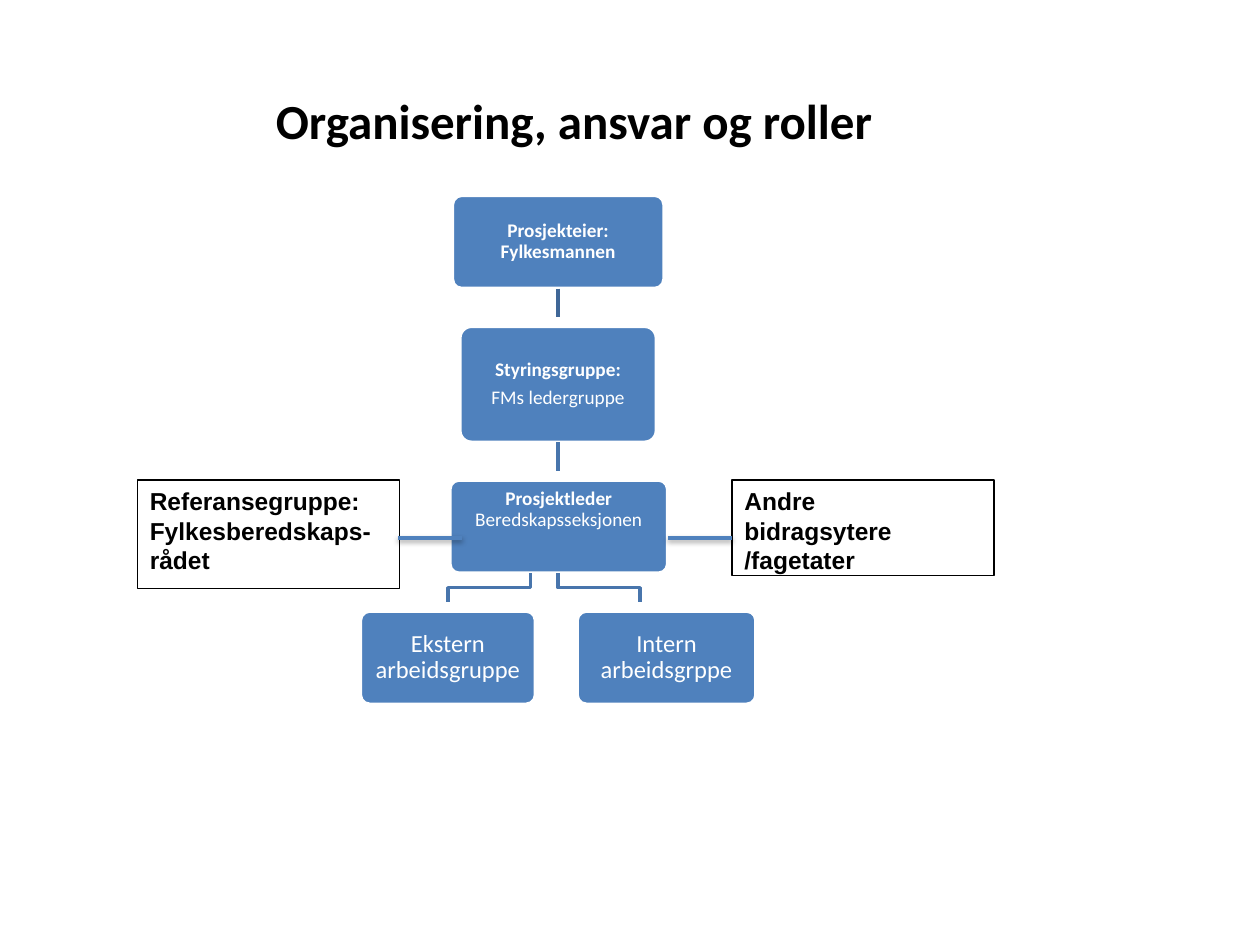
from lxml.etree import SubElement
from pptx import Presentation
from pptx.dml.color import RGBColor
from pptx.enum.shapes import MSO_CONNECTOR, MSO_SHAPE
from pptx.enum.text import MSO_ANCHOR, MSO_AUTO_SIZE, PP_ALIGN
from pptx.oxml.ns import qn
from pptx.util import Inches, Pt

BLACK = RGBColor(0x00, 0x00, 0x00)
WHITE = RGBColor(0xFF, 0xFF, 0xFF)
BLUE = RGBColor(0x4F, 0x81, 0xBD)
DARK = RGBColor(0x3F, 0x67, 0x97)
MID = RGBColor(0x48, 0x75, 0xAC)

AXIS = 4.43   # centre of the main chain
LINK = 0.23   # visible length of a link below a box
SIDE = 4.27   # height of the side lines


def style(font, name, size, color, bold):
    font.name, font.size, font.bold = name, Pt(size), bold
    font.color.rgb = color


def add_box(shapes, kind, box, fill, edge, width):
    shape = shapes.add_shape(kind, *map(Inches, box))
    shape.shadow.inherit = False
    shape.fill.solid()
    shape.fill.fore_color.rgb = fill
    shape.line.color.rgb = edge
    shape.line.width = Pt(width)
    shape.text_frame.word_wrap = True
    return shape


def add_title(shapes, box, text):
    frame = shapes.add_textbox(*map(Inches, box)).text_frame
    frame.word_wrap = True
    frame.auto_size = MSO_AUTO_SIZE.SHAPE_TO_FIT_TEXT
    par = frame.paragraphs[0]
    par.text, par.alignment = text, PP_ALIGN.CENTER
    style(par.font, "Calibri", 28, BLACK, True)


def add_node(shapes, box, pars, size=11, inset=0.05, anchor=MSO_ANCHOR.MIDDLE):
    """Rounded box; pars is a list of paragraphs, each a list of (text, bold)."""
    node = add_box(shapes, MSO_SHAPE.ROUNDED_RECTANGLE, box, BLUE, WHITE, 2)
    node.adjustments[0] = 0.1
    frame = node.text_frame
    frame.vertical_anchor = anchor
    frame.margin_left = frame.margin_right = Inches(inset)
    frame.margin_top = frame.margin_bottom = Inches(inset)
    for i, runs in enumerate(pars):
        par = frame.add_paragraph() if i else frame.paragraphs[0]
        par.alignment, par.line_spacing = PP_ALIGN.CENTER, 0.9
        if i:
            par.space_before = Pt(0.35 * size)
        for text, bold in runs:
            run = par.add_run()
            run.text = text
            style(run.font, "Calibri", size, WHITE, bold)
    return node


def add_note(shapes, box, lines):
    note = add_box(shapes, MSO_SHAPE.RECTANGLE, box, WHITE, BLACK, 0.75)
    frame = note.text_frame
    frame.vertical_anchor = MSO_ANCHOR.TOP
    for i, text in enumerate(lines):
        par = frame.add_paragraph() if i else frame.paragraphs[0]
        par.text, par.alignment = text, PP_ALIGN.LEFT
        style(par.font, "Arial", 14, BLACK, True)


def add_line(shapes, x1, y1, x2, y2, color):
    """Straight line; returns it with its empty effect list."""
    line = shapes.add_connector(MSO_CONNECTOR.STRAIGHT, *map(Inches, (x1, y1, x2, y2)))
    line.line.color.rgb = color
    line.line.width = Pt(2)
    return line, SubElement(line._element.spPr, qn("a:effectLst"))


def add_link(shapes, node, y, color):
    line, _ = add_line(shapes, AXIS, y, AXIS, y + LINK, color)
    line.begin_connect(node, 2)


def add_side(shapes, x1, x2):
    _, effects = add_line(shapes, x1, SIDE, x2, SIDE, BLUE)
    shade = SubElement(effects, qn("a:outerShdw"), blurRad=str(Pt(3.1)),
                       dist=str(Pt(1.6)), dir="5400000", rotWithShape="0")
    color = SubElement(shade, qn("a:srgbClr"), val=str(BLACK))
    SubElement(color, qn("a:alpha"), val="38000")


def add_elbow(shapes, x1, x2, y):
    turn = y + LINK / 2
    pen = shapes.build_freeform(Inches(x1), Inches(y))
    points = [(x1, turn), (x2, turn), (x2, y + LINK)]
    pen.add_line_segments([(Inches(a), Inches(b)) for a, b in points], close=False)
    elbow = pen.convert_to_shape()
    elbow.shadow.inherit = False
    elbow.fill.background()
    elbow.line.color.rgb = MID
    elbow.line.width = Pt(2)


def add_chain(shapes):
    owner = add_node(shapes, (3.59, 1.55, 1.68, 0.74),
                     [[("Prosjekteier: Fylkesmannen", True)]])
    add_link(shapes, owner, 2.29, DARK)
    board = add_node(shapes, (3.65, 2.59, 1.56, 0.92),
                     [[("Styringsgruppe:", True)], [("FMs ledergruppe", False)]])
    add_link(shapes, board, 3.51, MID)
    add_node(shapes, (3.57, 3.81, 1.73, 0.74),
             [[("Prosjektleder ", True), ("Beredskapsseksjonen", False)]],
             anchor=MSO_ANCHOR.TOP)


def add_groups(shapes, top, height):
    groups = [("Ekstern arbeidsgruppe", 2.86, 1.39, 4.21),
              ("Intern arbeidsgrppe", 4.58, 1.42, AXIS)]
    for text, left, width, start in groups:
        # The links end in steps: 3.55 and 5.08
        end = left + width / 2 if start < AXIS else 5.08
        add_elbow(shapes, start, end, top - 0.3)
        add_node(shapes, (left, top, width, height), [[(text, False)]], 14, 0.06)


def main():
    deck = Presentation()
    deck.slide_width, deck.slide_height = Inches(10), Inches(7.5)
    shapes = deck.slides.add_slide(deck.slide_layouts[6]).shapes
    add_title(shapes, (1.09, 0.67, 6.93, 0.57), "Organisering, ansvar og roller")
    add_chain(shapes)
    add_groups(shapes, 4.85, 0.74)
    add_note(shapes, (1.09, 3.81, 2.08, 0.86),
             ["Referansegruppe:", "Fylkesberedskaps-rådet"])
    add_side(shapes, 3.16, 3.67)
    add_note(shapes, (5.81, 3.81, 2.08, 0.76), ["Andre bidragsytere /fagetater"])
    add_side(shapes, 5.3, 5.81)
    deck.save("out.pptx")


if __name__ == "__main__":
    main()
